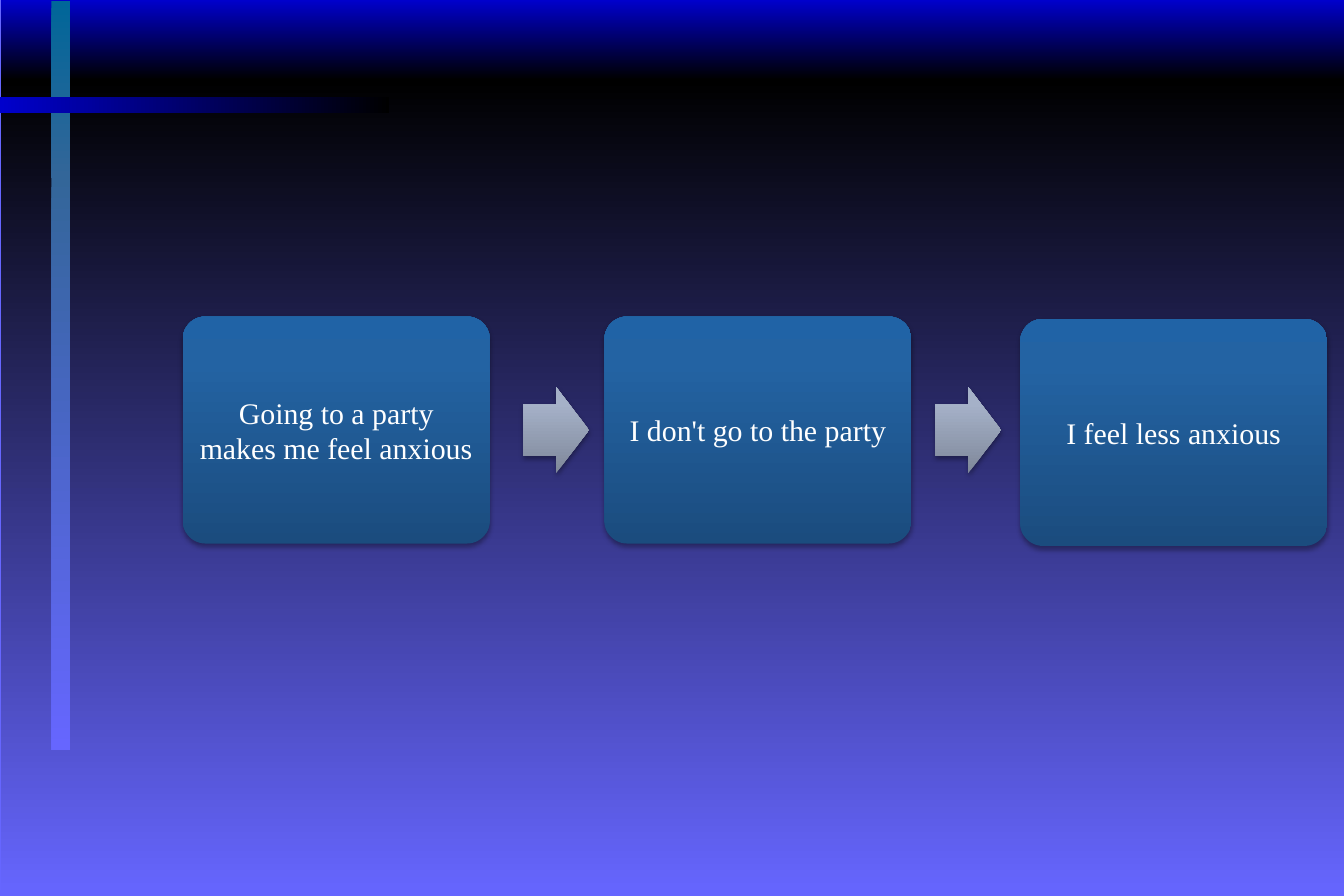
from dataclasses import dataclass

from lxml import etree
from pptx import Presentation
from pptx import util as u
from pptx.dml.color import RGBColor
from pptx.enum import shapes, text
from pptx.oxml.ns import qn

PX = 9144  # EMU per px, 100 px to the inch

BLACK = RGBColor(0x00, 0x00, 0x00)
WHITE = RGBColor(0xFF, 0xFF, 0xFF)
ROYAL = RGBColor(0x00, 0x00, 0xCC)
PERIWINKLE = RGBColor(0x66, 0x66, 0xFF)
TEAL = RGBColor(0x00, 0x66, 0x99)
STEEL = RGBColor(0x33, 0x66, 0x99)
BOX_DARK = RGBColor(0x1B, 0x4C, 0x7E)
BOX_MID = RGBColor(0x23, 0x63, 0xA3)
BOX_LIGHT = RGBColor(0x20, 0x63, 0xA6)
ARROW_DARK = RGBColor(0x7F, 0x88, 0x9A)
ARROW_MID = RGBColor(0xA5, 0xB1, 0xC8)
ARROW_LIGHT = RGBColor(0xA5, 0xB2, 0xC9)

DOWN, RIGHT, UP = 90, 0, 270
BOX_W, BOX_H = 257, 190
ARROW_W, ARROW_H, ARROW_Y = 55, 72, 324
INSET = 7


@dataclass
class Gradient:
    stops: list[tuple[int, RGBColor]]
    angle: int


@dataclass
class Band:
    x: int
    y: int
    w: int
    h: int
    start: RGBColor
    end: RGBColor
    angle: int = DOWN


@dataclass
class Step:
    x: int
    y: int
    words: str


BANDS = [
    Band(1, 0, 1125, 67, ROYAL, BLACK),
    Band(1, 67, 1125, 683, BLACK, PERIWINKLE),
    Band(43, 1, 16, 148, TEAL, STEEL),
    Band(43, 147, 16, 481, STEEL, PERIWINKLE),
    Band(0, 81, 326, 14, ROYAL, BLACK, RIGHT),
]
STEPS = [
    Step(153, 265, "Going to a party makes me feel anxious"),
    Step(506, 265, "I don't go to the party"),
    Step(854, 267, "I feel less anxious"),
]
ARROW_XS = [438, 783]
BOX_FILL = Gradient([(0, BOX_DARK), (80, BOX_MID), (100, BOX_LIGHT)], UP)
ARROW_FILL = Gradient([(0, ARROW_DARK), (80, ARROW_MID), (100, ARROW_LIGHT)], UP)


def set_gradient(sp, gradient: Gradient) -> None:
    sp.fill.gradient()
    sp.fill.gradient_angle = (360 - gradient.angle) % 360
    stop_list = next(sp._element.spPr.iter(qn("a:gsLst")))
    for stop in list(stop_list):
        stop_list.remove(stop)
    for pos, color in gradient.stops:
        stop = etree.SubElement(stop_list, qn("a:gs"), pos=str(pos * 1000))
        etree.SubElement(stop, qn("a:srgbClr"), val=str(color))


def add_shadow(sp) -> None:
    effects = sp._element.spPr.find(qn("a:effectLst"))
    shadow = etree.SubElement(effects, qn("a:outerShdw"), blurRad=str(u.Pt(3.1)),
                              dist=str(u.Pt(1.8)), dir="5400000", rotWithShape="0")
    color = etree.SubElement(shadow, qn("a:srgbClr"), val=str(BLACK))
    etree.SubElement(color, qn("a:alpha"), val="35000")


def add_shape(s, kind, x: int, y: int, w: int, h: int, gradient: Gradient,
              adjustments: tuple[float, ...] = ()):
    sp = s.shapes.add_shape(kind, x * PX, y * PX, w * PX, h * PX)
    for i, value in enumerate(adjustments):
        sp.adjustments[i] = value
    set_gradient(sp, gradient)
    sp.line.fill.background()
    sp.shadow.inherit = False
    return sp


def add_band(s, band: Band) -> None:
    gradient = Gradient([(0, band.start), (100, band.end)], band.angle)
    add_shape(s, shapes.MSO_SHAPE.RECTANGLE, band.x, band.y, band.w, band.h, gradient)


def add_step(s, step: Step) -> None:
    sp = add_shape(s, shapes.MSO_SHAPE.ROUNDED_RECTANGLE, step.x, step.y,
                   BOX_W, BOX_H, BOX_FILL, (0.1,))
    add_shadow(sp)
    tf = sp.text_frame
    frame_format = {"word_wrap": True, "vertical_anchor": text.MSO_ANCHOR.MIDDLE}
    frame_format |= {f"margin_{side}": INSET * PX
                     for side in ("left", "top", "right", "bottom")}
    for name, value in frame_format.items():
        setattr(tf, name, value)
    p = tf.paragraphs[0]
    p.alignment = text.PP_ALIGN.CENTER
    r = p.add_run()
    r.text = step.words
    for name, value in {"name": "Times New Roman", "size": u.Pt(18)}.items():
        setattr(r.font, name, value)
    r.font.color.rgb = WHITE


def add_arrow(s, x: int) -> None:
    sp = add_shape(s, shapes.MSO_SHAPE.RIGHT_ARROW, x, ARROW_Y,
                   ARROW_W, ARROW_H, ARROW_FILL, (0.6, 0.5))
    add_shadow(sp)


def main() -> None:
    prs = Presentation()
    prs.slide_width, prs.slide_height = 1125 * PX, 750 * PX
    s = prs.slides.add_slide(prs.slide_layouts[6])

    # Background and decorative bars
    s.background.fill.solid()
    s.background.fill.fore_color.rgb = PERIWINKLE
    for band in BANDS:
        add_band(s, band)

    # Chain of steps
    for step in STEPS:
        add_step(s, step)
    for x in ARROW_XS:
        add_arrow(s, x)

    prs.save("out.pptx")


if __name__ == "__main__":
    main()
